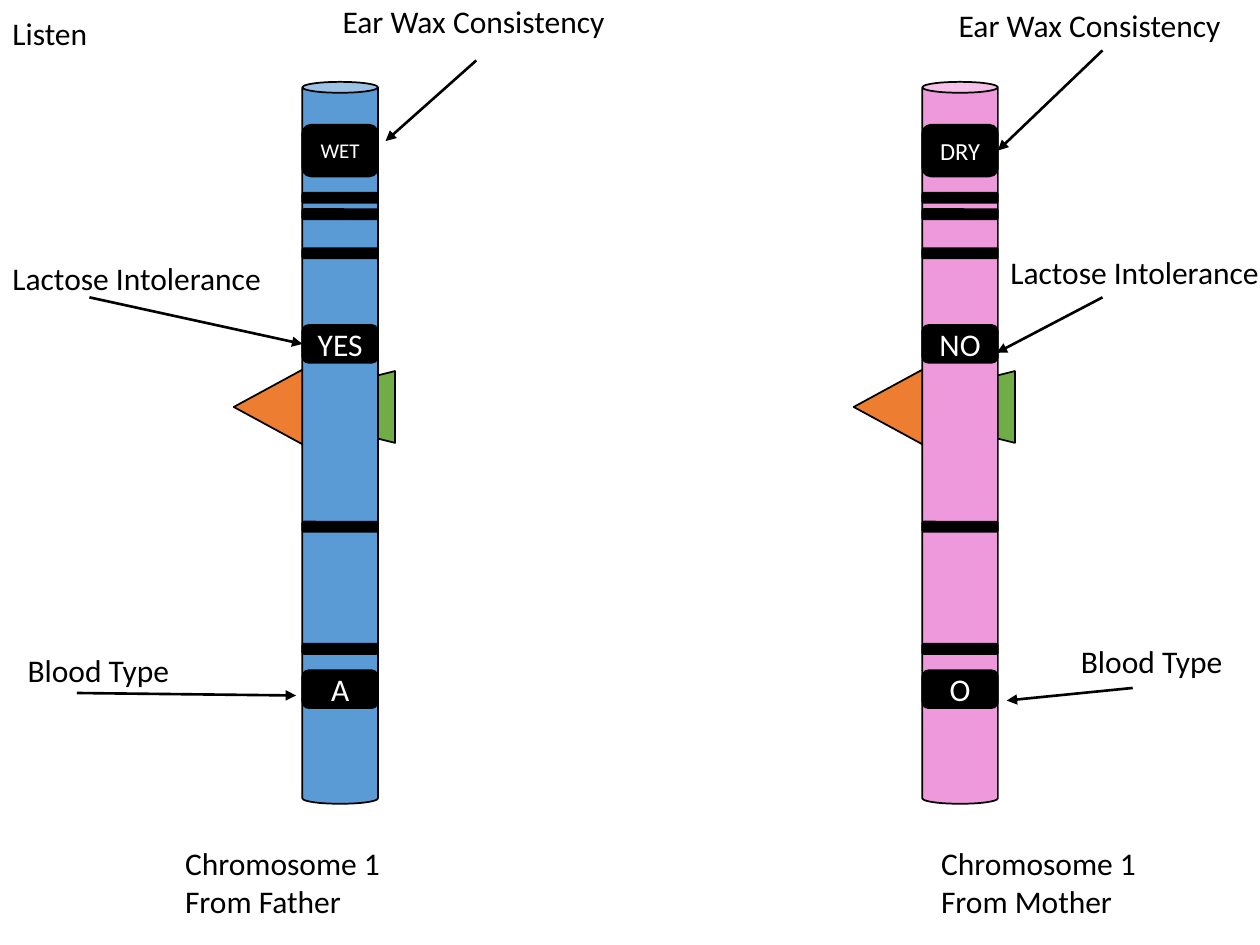
import pptx
import pptx.dml.color
import pptx.enum.shapes
import pptx.enum.text
import pptx.oxml
import pptx.oxml.ns
import pptx.util
from pptx.util import Inches

RGBColor = pptx.dml.color.RGBColor
SHAPE = pptx.enum.shapes.MSO_SHAPE
BLACK = RGBColor(0x00, 0x00, 0x00)
WHITE = RGBColor(0xFF, 0xFF, 0xFF)
BLUE = RGBColor(0x5B, 0x9B, 0xD5)
PINK = RGBColor(0xEF, 0x99, 0xDD)
ORANGE = RGBColor(0xED, 0x7D, 0x31)
GREEN = RGBColor(0x70, 0xAD, 0x47)

WIDTH = 0.6
FATHER_LEFT, MOTHER_LEFT = 2.4, 7.32
PLAIN_BANDS = (1.53, 1.66, 1.97, 4.14, 5.11)
GENE_BANDS = ((0.99, 0.41), (2.58, 0.3), (5.32, 0.3))  # top, height

BAND_TEXT = {
    "margin_left": 0,
    "margin_right": 0,
    "word_wrap": True,
    "vertical_anchor": pptx.enum.text.MSO_ANCHOR.MIDDLE,
}
LABEL_TEXT = {
    "word_wrap": True,
    "auto_size": pptx.enum.text.MSO_AUTO_SIZE.SHAPE_TO_FIT_TEXT,
}

LABELS = (  # text, left, top
    ("Listen", 0, 0.06),
    ("Ear Wax Consistency", 2.62, -0.03),
    ("Ear Wax Consistency", 7.51, 0),
    ("Lactose Intolerance", 0, 2.01),
    ("Lactose Intolerance", 7.92, 1.96),
    ("Blood Type", 0.12, 5.12),
    ("Blood Type", 8.48, 5.05),
)


def apply_format(target, values):
    for attribute, value in values.items():
        setattr(target, attribute, value)


def style_text(paragraph, color, size=18):
    apply_format(paragraph.font, {"name": "Calibri", "size": pptx.util.Pt(size)})
    paragraph.font.color.rgb = color


def add_part(group, preset, left, top, width, height, color, rotation=0):
    part = group.shapes.add_shape(
        preset, Inches(left), Inches(top), Inches(width), Inches(height))
    part.rotation = rotation
    part.shadow.inherit = False
    part.fill.solid()
    part.fill.fore_color.rgb = color
    part.line.color.rgb = BLACK
    part.line.width = pptx.util.Pt(1)
    return part


def add_band(group, left, top, height):
    return add_part(group, SHAPE.ROUNDED_RECTANGLE, left, top, WIDTH, height, BLACK)


def add_chromosome(slide, left, color, alleles):
    """Draw one banded chromosome and return its gene bands, top to bottom."""
    group = slide.shapes.add_group_shape()
    add_part(group, SHAPE.TRAPEZOID, left + 0.38, 3.16, 0.57, 0.14, GREEN, 270)
    add_part(group, SHAPE.ISOSCELES_TRIANGLE, left - 0.57, 2.94, 0.63, 0.58, ORANGE, 270)
    body = add_part(group, SHAPE.CAN, left, 0.65, WIDTH, 5.73, color)
    body.adjustments[0] = 0.145
    for top in PLAIN_BANDS:
        add_band(group, left, top, 0.08)

    genes = []
    for (top, height), (allele, size) in zip(GENE_BANDS, alleles):
        gene = add_band(group, left, top, height)
        apply_format(gene.text_frame, BAND_TEXT)
        paragraph = gene.text_frame.paragraphs[0]
        paragraph.text = allele
        paragraph.alignment = pptx.enum.text.PP_ALIGN.CENTER
        style_text(paragraph, WHITE, size)
        genes.append(gene)
    return genes


def add_label(slide, text, left, top, width=2.49, height=0.4):
    box = slide.shapes.add_textbox(
        Inches(left), Inches(top), Inches(width), Inches(height))
    apply_format(box.text_frame, LABEL_TEXT)
    box.text_frame.text = text
    for paragraph in box.text_frame.paragraphs:
        style_text(paragraph, BLACK)
    return box


def add_captions(slide):
    """Name both chromosomes, the second one set off by a tab stop."""
    captions = add_label(
        slide, "Chromosome 1\tChromosome 1\nFrom Father\tFrom Mother",
        1.37, 6.65, 8.55, 0.71)
    for paragraph in captions.text_frame.paragraphs:
        properties = paragraph._p.get_or_add_pPr()
        stops = pptx.oxml.ns.qn("a:tabLst")
        stop = properties.makeelement(pptx.oxml.ns.qn("a:tab"),
                                      {"pos": str(Inches(6)), "algn": "l"})
        tab_list = properties.makeelement(stops, {})
        tab_list.append(stop)
        properties.append(tab_list)


def add_arrow(slide, start, end, gene=None, side=None):
    """Point from a label to a gene, joined to the gene's side if one is given."""
    arrow = slide.shapes.add_connector(
        pptx.enum.shapes.MSO_CONNECTOR.STRAIGHT,
        *(Inches(value) for value in start + end))
    if gene is not None:
        arrow.end_connect(gene, side)
    arrow.line.color.rgb = BLACK
    arrow.line.width = pptx.util.Pt(1.5)
    line = arrow.line._get_or_add_ln()
    line.append(line.makeelement(pptx.oxml.ns.qn("a:tailEnd"), {"type": "triangle"}))
    properties = arrow._element.spPr
    properties.append(properties.makeelement(pptx.oxml.ns.qn("a:effectLst"), {}))


def main():
    presentation = pptx.Presentation()
    presentation.slide_width = Inches(10)
    presentation.slide_height = Inches(7.5)
    slide = presentation.slides.add_slide(presentation.slide_layouts[6])

    father_genes = add_chromosome(
        slide, FATHER_LEFT, BLUE, (("WET", 12), ("YES", 18), ("A", 18)))
    mother_genes = add_chromosome(
        slide, MOTHER_LEFT, PINK, (("DRY", 14), ("NO", 18), ("O", 18)))

    add_captions(slide)
    for text, left, top in LABELS:
        add_label(slide, text, left, top)

    add_arrow(slide, (3.78, 0.48), (3.06, 1.12))
    add_arrow(slide, (8.75, 0.4), (7.92, 1.19), mother_genes[0], 3)
    add_arrow(slide, (0.71, 2.36), (2.4, 2.73), father_genes[1], 1)
    add_arrow(slide, (8.75, 2.36), (7.91, 2.8))
    add_arrow(slide, (0.61, 5.5), (2.35, 5.52))
    add_arrow(slide, (8.99, 5.46), (7.99, 5.56))

    presentation.save("out.pptx")


if __name__ == "__main__":
    main()
